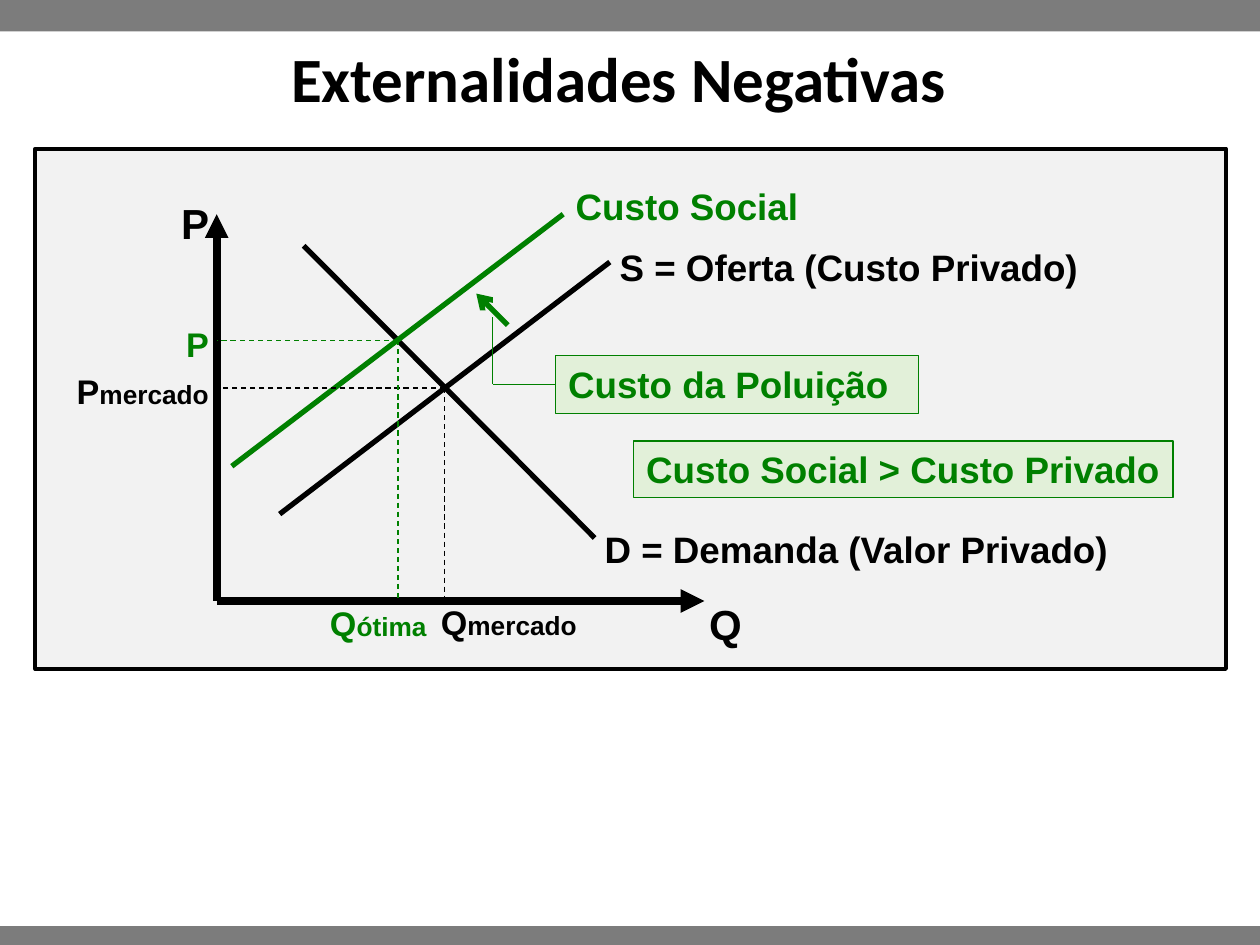
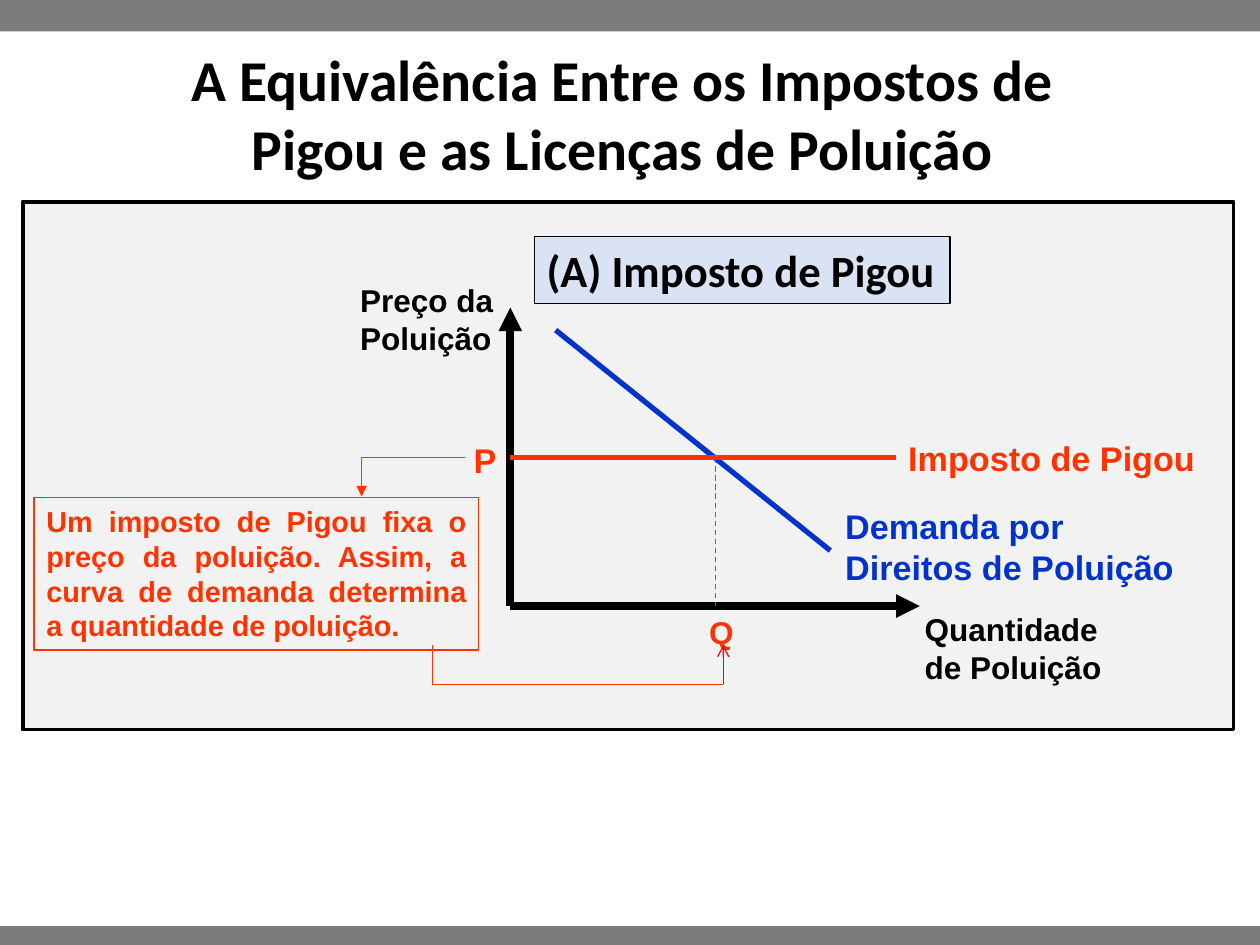
"""Build two slides of supply and demand diagrams on externalities and Pigouvian taxes."""
from lxml import etree
from pptx import Presentation, util as u
from pptx.dml.color import RGBColor
from pptx.enum import dml, shapes, text
from pptx.oxml.ns import qn

W, H = 10, 7.5
BLACK = RGBColor(0x00, 0x00, 0x00)
GREY = RGBColor(0x7C, 0x7C, 0x7C)
PANEL = RGBColor(0xF2, 0xF2, 0xF2)
GREEN = RGBColor(0x00, 0x80, 0x00)
MINT = RGBColor(0xE2, 0xF0, 0xD9)
BLUE = RGBColor(0x00, 0x33, 0xCC)
SKY = RGBColor(0xDA, 0xE3, 0xF3)
ORANGE = RGBColor(0xFF, 0x33, 0x00)
RED = RGBColor(0xFF, 0x00, 0x00)
THIN, CURVE, AXIS = 0.75, 3, 4.5

BANDS = [(0, 0, W, 0.25), (0, H - 0.15, W, 0.15)]

SLIDES = [
    dict(
        title=("Externalidades Negativas", 36, (2.17, 0.05, 5.48, 1.12)),
        panel=(0.28, 1.18, 9.45, 4.13),
        origin=(1.72, 4.77), ends=(5.59, 1.7),
        curves=[((2.41, 1.95), (4.72, 4.27), BLACK),
                ((2.22, 4.08), (4.84, 2.08), BLACK),
                ((1.84, 3.7), (4.47, 1.7), GREEN)],
        guides=[((3.53, 3.08), BLACK, "xy"), ((3.16, 2.7), GREEN, "xy")],
        labels=[([("P", 24)], (1.34, 1.52, 0.44, 0.5), BLACK),
                ([("Q", 24)], (5.53, 4.7, 0.44, 0.5), BLACK),
                ([("S = Oferta (Custo Privado)", 21)], (4.82, 1.89, 3.84, 0.45), BLACK),
                ([("D = Demanda (Valor Privado)", 21)], (4.7, 4.13, 4.24, 0.45), BLACK),
                ([("Q", 19.5), ("mercado", 15)], (3.4, 4.72, 1.31, 0.43), BLACK),
                ([("P", 19.5), ("mercado", 15)], (0.51, 2.89, 1.38, 0.43), BLACK),
                ([("Custo Social", 21)], (4.47, 1.41, 2.31, 0.45), GREEN),
                ([("Q", 19.5), ("ótima", 15)], (2.52, 4.73, 1.13, 0.43), GREEN),
                ([("P", 19.5)], (1.38, 2.52, 1.13, 0.43), GREEN)],
        boxes=[([("Custo da Poluição", 21)], (4.41, 2.82, 2.88, 0.46), GREEN,
                dict(fill=MINT, line=GREEN)),
               ([("Custo Social > Custo Privado", 21)], (5.03, 3.5, 4.28, 0.45), GREEN,
                dict(fill=MINT, line=GREEN))],
        pointers=[((4.03, 2.58), (3.78, 2.33), GREEN, dict(width=CURVE, tail="arrow")),
                  ((3.91, 2.52), (3.91, 3.05), GREEN, {}),
                  ((3.91, 3.05), (4.41, 3.05), GREEN, dict(join=(0, 1)))],
    ),
    dict(
        title=("A Equivalência Entre os Impostos de Pigou e as Licenças de Poluição",
               33, (1.28, 0.29, 7.32, 1.21)),
        panel=(0.18, 1.6, 9.61, 4.19),
        origin=(4.05, 4.81), ends=(7.3, 2.44),
        curves=[((4.41, 2.62), (6.59, 4.37), BLUE),
                ((4.05, 3.63), (7.11, 3.63), ORANGE)],
        guides=[((5.68, 3.63), ORANGE, "x")],
        labels=[([("Preço da Poluição", 18)], (2.76, 2.18, 1.29, 0.71), BLACK),
                ([("Quantidade de Poluição", 18)], (7.24, 4.79, 1.75, 0.71), BLACK),
                ([("Demanda por Direitos de Poluição", 19.5)], (6.61, 3.96, 2.81, 0.76), BLUE),
                ([("Imposto de Pigou", 19.5)], (7.11, 3.42, 2.55, 0.43), ORANGE),
                ([("P", 19.5)], (3.66, 3.44, 0.31, 0.43), ORANGE),
                ([("Q", 18)], (5.53, 4.82, 0.31, 0.4), ORANGE)],
        boxes=[([("Um imposto de Pigou fixa o preço da poluição. Assim, a curva de demanda "
                  "determina a quantidade de poluição.", 16.5)], (0.27, 3.95, 3.53, 1.21), ORANGE,
                dict(line=ORANGE, align=text.PP_ALIGN.JUSTIFY, right=0.1)),
               ([("(A) Imposto de Pigou", 25.5)], (4.24, 1.88, 3.3, 0.53), BLACK,
                dict(fill=SKY, line=BLACK, font="Calibri"))],
        pointers=[((3.69, 3.63), (2.87, 3.63), ORANGE, {}),
                  ((2.87, 3.63), (2.87, 3.94), ORANGE, dict(tail="triangle")),
                  ((3.43, 5.12), (3.43, 5.43), ORANGE, {}),
                  ((3.43, 5.43), (5.74, 5.43), ORANGE, {}),
                  ((5.74, 5.43), (5.74, 5.12), RED, dict(tail="arrow"))],
    ),
]


def inches(values):
    return [u.Inches(v) for v in values]


def write(sp, runs, color, font="Arial", align=text.PP_ALIGN.LEFT,
          anchor=text.MSO_ANCHOR.TOP, right=0.05):
    tf = sp.text_frame
    tf.word_wrap = True
    tf.auto_size = text.MSO_AUTO_SIZE.NONE
    tf.vertical_anchor = anchor
    tf.margin_left, tf.margin_right = inches((0.1, right))
    tf.margin_top = tf.margin_bottom = u.Inches(0.05)
    p = tf.paragraphs[0]
    p.alignment = align
    for words, size in runs:
        r = p.add_run()
        r.text = words
        r.font.name, r.font.size, r.font.bold = font, u.Pt(size), True
        r.font.color.rgb = color


def add_rect(s, at, fill=None, line=None, width=THIN):
    sp = s.shapes.add_shape(shapes.MSO_SHAPE.RECTANGLE, *inches(at))
    sp.shadow.inherit = False
    for part, color in ((sp.fill, fill), (sp.line.fill, line)):
        if color is None:
            part.background()
        else:
            part.solid()
            part.fore_color.rgb = color
    if line is not None:
        sp.line.width = u.Pt(width)
    return sp


def add_line(s, start, end, color, width=THIN, dash=False, tail=None):
    c = s.shapes.add_connector(shapes.MSO_CONNECTOR.STRAIGHT, *inches(start + end))
    c.line.color.rgb = color
    c.line.width = u.Pt(width)
    if dash:
        c.line.dash_style = dml.MSO_LINE.DASH
    props = c.element.spPr
    if tail:
        etree.SubElement(props.find(qn("a:ln")), qn("a:tailEnd"), type=tail)
    etree.SubElement(props, qn("a:effectLst"))
    return c


def add_bands(prs, s):
    for i, at in enumerate(BANDS):
        band = add_rect(s, at, fill=GREY).element
        band.nvSpPr.cNvPr.set("id", str(100 + i))
        prs.slide_master.shapes.element.insert(2, band)


def add_diagram(s, d):
    add_rect(s, d["panel"], fill=PANEL, line=BLACK, width=2.25)
    (x0, y0), (x1, y1) = d["origin"], d["ends"]
    for end in ((x0, y1), (x1, y0)):
        add_line(s, (x0, y0), end, BLACK, width=AXIS, tail="triangle")
    for start, end, color in d["curves"]:
        add_line(s, start, end, color, width=CURVE)
    for (x, y), color, axes in d["guides"]:
        feet = {"x": (x, y0), "y": (x0, y)}
        for axis in axes:
            add_line(s, (x, y), feet[axis], color, dash=True)
    for runs, at, color in d["labels"]:
        write(s.shapes.add_textbox(*inches(at)), runs, color)
    boxes = []
    for runs, at, color, style in d["boxes"]:
        style = dict(style)
        boxes.append(add_rect(s, at, fill=style.pop("fill", None), line=style.pop("line")))
        write(boxes[-1], runs, color, **style)
    for start, end, color, style in d["pointers"]:
        style = dict(style)
        join = style.pop("join", None)
        c = add_line(s, start, end, color, **style)
        if join:
            c.end_connect(boxes[join[0]], join[1])


def main():
    prs = Presentation()
    prs.slide_width, prs.slide_height = inches((W, H))
    for i, d in enumerate(SLIDES):
        s = prs.slides.add_slide(prs.slide_layouts[5])
        if i == 0:
            add_bands(prs, s)
        words, size, at = d["title"]
        sp = s.shapes.title
        sp.left, sp.top, sp.width, sp.height = inches(at)
        write(sp, [(words, size)], BLACK, font="Calibri", align=text.PP_ALIGN.CENTER,
              anchor=text.MSO_ANCHOR.MIDDLE, right=0.1)
        add_diagram(s, d)
    prs.save("out.pptx")


if __name__ == "__main__":
    main()
